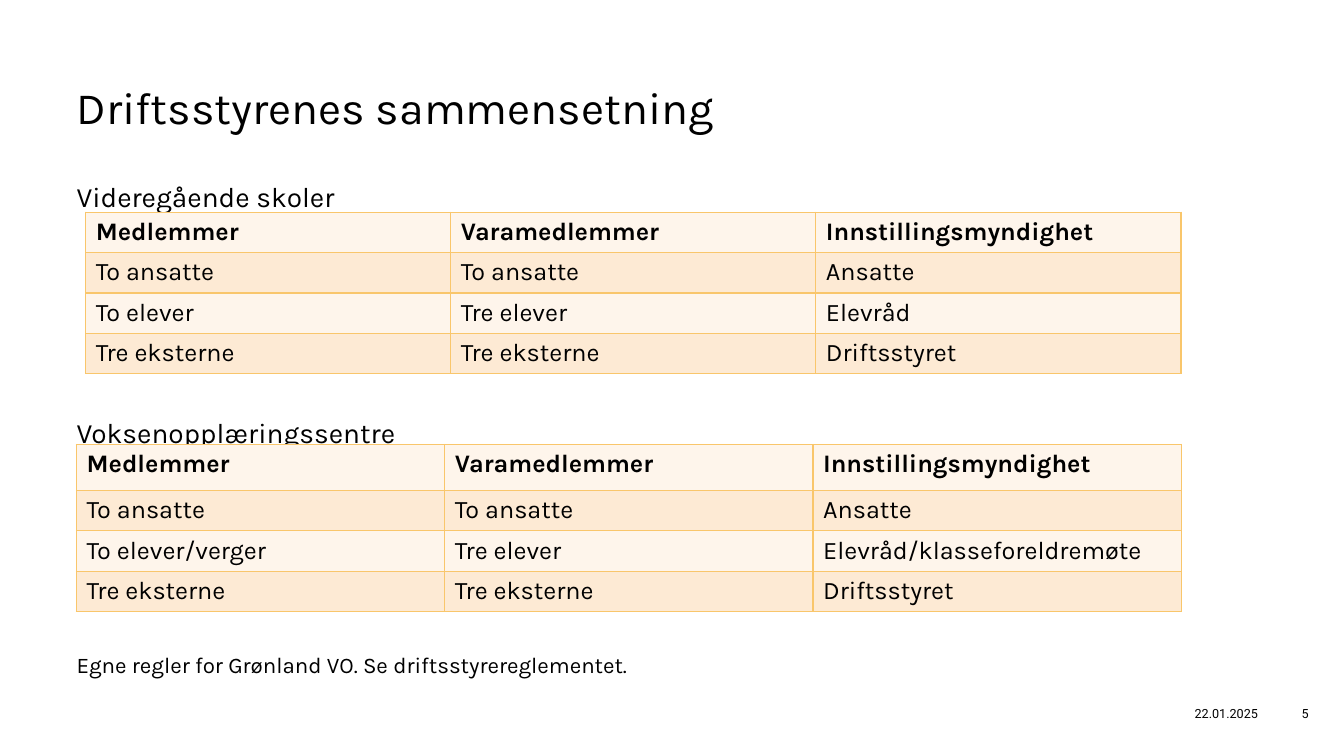
from pptx import Presentation
from pptx import util as u
from pptx.dml.color import RGBColor
from pptx.enum import text as t
from pptx.oxml import parse_xml
from pptx.oxml.ns import nsdecls

HEADER = ["Medlemmer", "Varamedlemmer", "Innstillingsmyndighet"]
BORDER = "F9C66B"
BANDS = ["FEF5EB", "FDEAD4"]


def color(hex_string):
    return RGBColor.from_string(hex_string)


def write(paragraph, words, size=18, font="Karla", bold=False, align=t.PP_ALIGN.LEFT, before=0):
    paragraph.alignment = align
    paragraph.space_before = u.Pt(before)
    run = paragraph.add_run()
    run.text = words
    run.font.size = u.Pt(size)
    run.font.name = font
    run.font.bold = bold
    run.font.color.rgb = color("000000")


presentation = Presentation()
presentation.slide_width, presentation.slide_height = u.Cm(33.87), u.Cm(19.05)
slide = presentation.slides.add_slide(presentation.slide_layouts[5])

title = slide.shapes.title
title.left, title.top, title.width, title.height = u.Cm(1.93), u.Cm(2), u.Cm(26.31), u.Cm(3.63)
body = slide.shapes.add_textbox(u.Cm(1.93), u.Cm(4.52), u.Cm(26.31), u.Cm(12.95))
for shape in (title, body):
    frame = shape.text_frame
    frame.margin_left = frame.margin_top = frame.margin_right = frame.margin_bottom = 0
    frame.vertical_anchor = t.MSO_ANCHOR.TOP
    frame.auto_size = t.MSO_AUTO_SIZE.NONE
    frame.word_wrap = True
write(title.text_frame.paragraphs[0], "Driftsstyrenes sammensetning", size=32)

# The space before each later paragraph leaves room for a table
write(body.text_frame.paragraphs[0], "Videregående skoler", size=20)
for words, size in [
    ("Voksenopplæringssentre", 20),
    ("Egne regler for Grønland VO. Se driftsstyrereglementet.", 16),
]:
    write(body.text_frame.add_paragraph(), words, size=size, before=144.5)

for words, left, width, align in [
    ("22.01.2025", 28.22, 3.73, t.PP_ALIGN.RIGHT),
    ("5", 31.93, 1.93, t.PP_ALIGN.CENTER),
]:
    footer = slide.shapes.add_textbox(u.Cm(left), u.Cm(17.48), u.Cm(width), u.Cm(1.02))
    footer.text_frame.word_wrap = True
    footer.text_frame.vertical_anchor = t.MSO_ANCHOR.MIDDLE
    write(footer.text_frame.paragraphs[0], words, size=9, font="Roboto", align=align)

school_rows = [
    HEADER,
    ["To ansatte", "To ansatte", "Ansatte"],
    ["To elever", "Tre elever", "Elevråd"],
    ["Tre eksterne", "Tre eksterne", "Driftsstyret"],
]
adult_centre_rows = [
    HEADER,
    ["To ansatte", "To ansatte", "Ansatte"],
    ["To elever/verger", "Tre elever", "Elevråd/klasseforeldremøte"],
    ["Tre eksterne", "Tre eksterne", "Driftsstyret"],
]

for rows, left, top, width, header_height in [
    (school_rows, 2.16, 5.35, 27.6, 1),
    (adult_centre_rows, 1.93, 11.2, 27.84, 1.16),
]:
    table = slide.shapes.add_table(
        len(rows), len(HEADER), u.Cm(left), u.Cm(top), u.Cm(width), u.Cm(header_height + len(rows) - 1)
    ).table
    for row_index, row in enumerate(rows):
        table.rows[row_index].height = u.Cm(1 if row_index else header_height)
        for column_index, words in enumerate(row):
            cell = table.cell(row_index, column_index)
            cell.fill.solid()
            cell.fill.fore_color.rgb = color(BANDS[row_index % 2])
            write(cell.text_frame.paragraphs[0], words, bold=row_index == 0)
            properties = cell._tc.get_or_add_tcPr()
            for position, side in enumerate(["lnL", "lnR", "lnT", "lnB"]):
                properties.insert(position, parse_xml(
                    f'<a:{side} {nsdecls("a")} w="12700"><a:solidFill>'
                    f'<a:srgbClr val="{BORDER}"/></a:solidFill></a:{side}>'
                ))

presentation.save("out.pptx")
